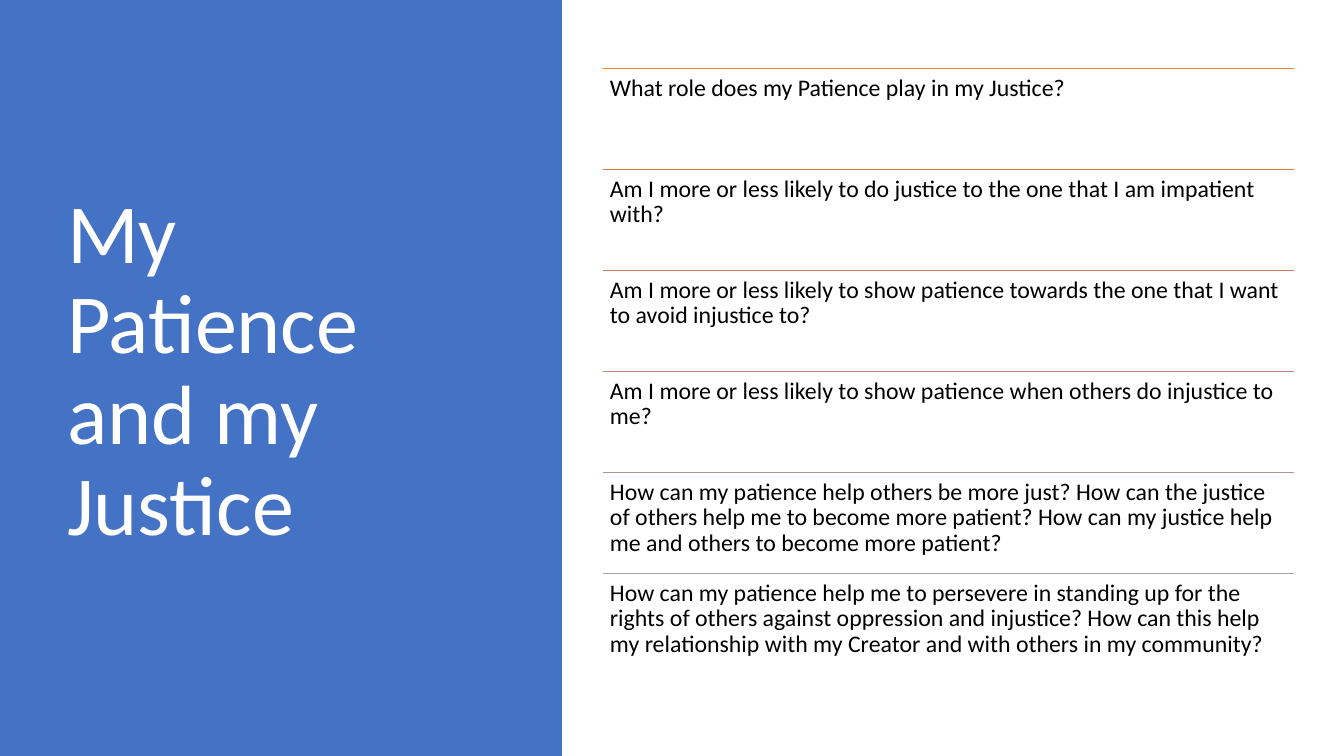
import pptx
import pptx.enum.shapes
import pptx.enum.text
import pptx.oxml.ns
import pptx.util
import lxml.etree

HUES = {"panel": "4472C4", "title": "FFFFFF", "body": "000000"}
RULES = ["ED7D31", "DC7A4B", "CC7D64", "BD867B", "B09391", "A5A5A5"]
ASKS = [
    "What role does my Patience play in my Justice?",
    "Am I more or less likely to do justice to the one that I am impatient with?",
    "Am I more or less likely to show patience towards the one that I want to avoid injustice to?",
    "Am I more or less likely to show patience when others do injustice to me?",
    "How can my patience help others be more just? How can the justice of others "
    "help me to become more patient? How can my justice help me and others to become more patient?",
    "How can my patience help me to persevere in standing up for the rights of others "
    "against oppression and injustice? How can this help my relationship with my Creator "
    "and with others in my community?",
]


def tint(hue):
    return pptx.dml.color.RGBColor.from_string(hue)


class Deck:
    """Draws on one slide, with lengths in hundredths of its width and height."""

    def __init__(self):
        self.show = pptx.Presentation()
        self.show.slide_width = pptx.util.Inches(13.33)
        self.show.slide_height = pptx.util.Inches(7.5)
        self.slide = self.show.slides.add_slide(self.show.slide_layouts[6])
        self.home = self.slide.shapes
        self.font = "Calibri"

    def grid(self, *spots):
        sides = (self.show.slide_width, self.show.slide_height)
        return [round(spot * sides[i % 2] / 100) for i, spot in enumerate(spots)]

    def group(self):
        self.home = self.slide.shapes.add_group_shape().shapes

    def panel(self, left, top, wide, high, hue):
        kind = pptx.enum.shapes.MSO_SHAPE.RECTANGLE
        box = self.home.add_shape(kind, *self.grid(left, top, wide, high))
        box.shadow.inherit = False
        box.fill.solid()
        box.fill.fore_color.rgb = tint(hue)
        box.line.fill.background()

    def rule(self, left, top, wide, hue):
        kind = pptx.enum.shapes.MSO_CONNECTOR.STRAIGHT
        line = self.home.add_connector(kind, *self.grid(left, top, left + wide, top))
        line.line.color.rgb = tint(hue)
        line.line.width = pptx.util.Pt(1)
        props = line._element.spPr
        lxml.etree.SubElement(props, pptx.oxml.ns.qn("a:effectLst"))

    def text(self, left, top, wide, high, words, size, hue, **frame):
        box = self.home.add_textbox(*self.grid(left, top, wide, high))
        for name, value in {"word_wrap": True, **frame}.items():
            setattr(box.text_frame, name, value)
        para = box.text_frame.paragraphs[0]
        para.line_spacing = 0.9
        run = para.add_run()
        run.text = words
        for name, value in {"name": self.font, "size": pptx.util.Pt(size)}.items():
            setattr(run.font, name, value)
        run.font.color.rgb = tint(hue)


def main():
    deck = Deck()
    deck.panel(0, 0, 41.8, 100, HUES["panel"])
    deck.text(4.26, 9.07, 31.2, 80.27, "My Patience and my Justice", 60, HUES["title"],
              vertical_anchor=pptx.enum.text.MSO_ANCHOR.MIDDLE)
    deck.group()
    left, top, wide, step = 44.86, 9.07, 51.39, 13.36
    sides = ("left", "top", "right", "bottom")
    pads = {f"margin_{side}": pptx.util.Inches(0.07) for side in sides}
    for i, (ask, hue) in enumerate(zip(ASKS, RULES)):
        row = top + i * step
        deck.rule(left, row, wide, hue)
        deck.text(left, row, wide, step, ask, 17, HUES["body"], **pads)
    deck.show.save("out.pptx")


if __name__ == "__main__":
    main()
